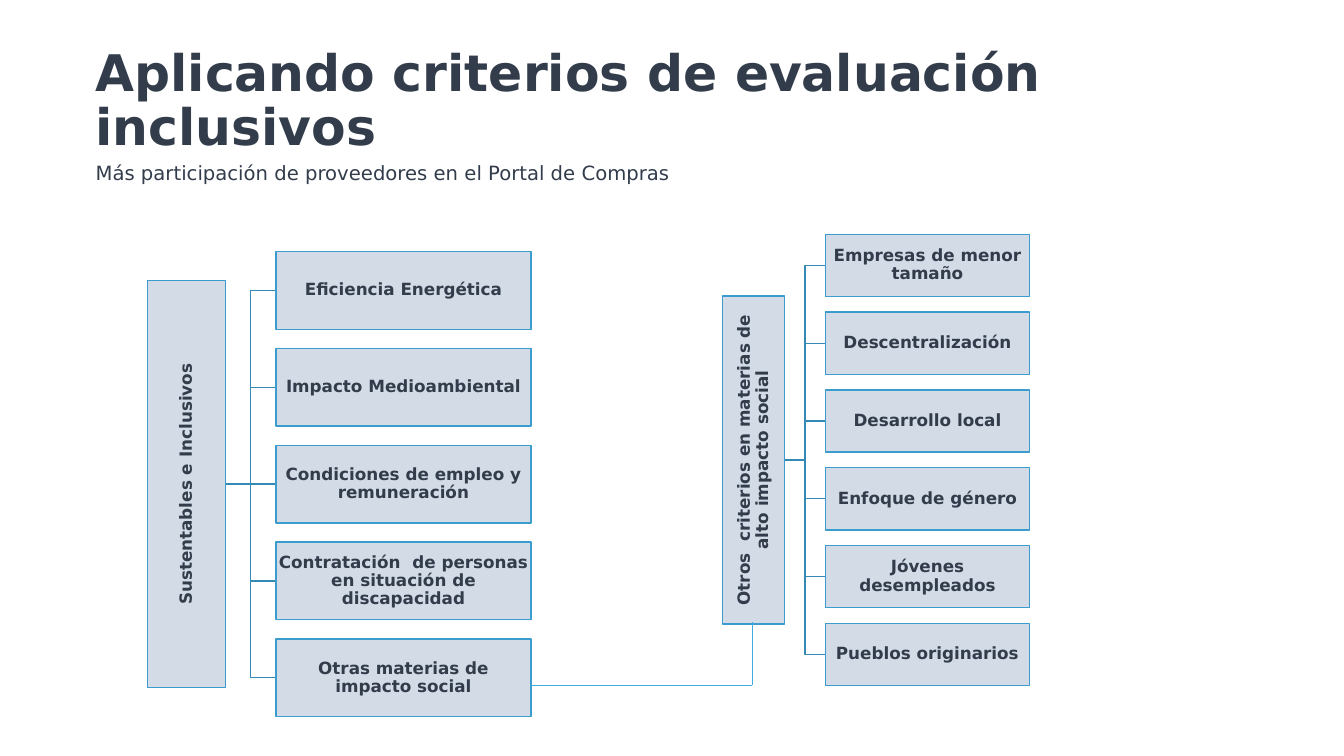
"""Build a slide with two trees of inclusive evaluation criteria."""
from dataclasses import dataclass

import pptx
import pptx.dml.color
import pptx.enum.shapes
import pptx.enum.text
import pptx.util
from lxml import etree
from pptx.util import Cm


@dataclass(frozen=True)
class Theme:
    font: str = "DejaVu Sans"
    text: str = "323C4B"
    box_fill: str = "D2DBE6"
    box_line: str = "3B9CCD"
    branch: str = "348AB5"
    link: str = "41ACE2"
    title_size: int = 36
    subtitle_size: int = 14
    box_size: int = 12


theme = Theme()
color = pptx.dml.color.RGBColor.from_string
align = pptx.enum.text.PP_ALIGN
anchor = pptx.enum.text.MSO_ANCHOR


def write(shape, text, size, bold, line_spacing=None):
    frame = shape.text_frame
    frame.word_wrap = True
    frame.text = text
    paragraph = frame.paragraphs[0]
    paragraph.line_spacing = line_spacing
    font = paragraph.runs[0].font
    font.name = theme.font
    font.size = pptx.util.Pt(size)
    font.bold = bold
    font.color.rgb = color(theme.text)
    return frame


def add_line(start_x, start_y, end_x, end_y, line_color, width):
    line = slide.shapes.add_connector(
        pptx.enum.shapes.MSO_CONNECTOR.STRAIGHT,
        Cm(start_x), Cm(start_y), Cm(end_x), Cm(end_y),
    )
    line.line.color.rgb = color(line_color)
    line.line.width = pptx.util.Pt(width)
    etree.SubElement(line._element.spPr, pptx.oxml.ns.qn("a:effectLst"))


presentation = pptx.Presentation()
presentation.slide_width = Cm(33.87)
presentation.slide_height = Cm(19.05)
slide = presentation.slides.add_slide(presentation.slide_layouts[6])

title = slide.shapes.add_textbox(Cm(2.16), Cm(1.78), Cm(25.73), Cm(1.6))
title_frame = write(title, "Aplicando criterios de evaluación inclusivos", theme.title_size, True, 0.9)
title_frame.vertical_anchor = anchor.MIDDLE

subtitle = slide.shapes.add_textbox(Cm(2.16), Cm(3.94), Cm(16.33), Cm(0.86))
write(subtitle, "Más participación de proveedores en el Portal de Compras", theme.subtitle_size, False)

trees = [
    {
        "root": "Sustentables e Inclusivos",
        "center": (4.7, 12.2),
        "root_length": 10.26,
        "thickness": 1.96,
        "child_left": 6.96,
        "child_width": 6.42,
        "pitch": 2.44,
        "children": [
            "Eficiencia Energética",
            "Impacto Medioambiental",
            "Condiciones de empleo y remuneración",
            "Contratación  de personas en situación de discapacidad",
            "Otras materias de impacto social",
        ],
    },
    {
        "root": "Otros  criterios en materias de alto impacto social",
        "center": (18.99, 11.59),
        "root_length": 8.26,
        "thickness": 1.57,
        "child_left": 20.8,
        "child_width": 5.15,
        "pitch": 1.96,
        "children": [
            "Empresas de menor tamaño",
            "Descentralización",
            "Desarrollo local",
            "Enfoque de género",
            "Jóvenes desempleados",
            "Pueblos originarios",
        ],
    },
]

for tree in trees:
    center_x, center_y = tree["center"]
    thickness = tree["thickness"]
    child_left, child_width = tree["child_left"], tree["child_width"]
    root_right = center_x + thickness / 2
    middle_x = (root_right + child_left) / 2
    boxes = [(tree["root"], center_x, center_y, tree["root_length"], 270)]

    for index, label in enumerate(tree["children"]):
        offset = index - (len(tree["children"]) - 1) / 2
        child_y = center_y + offset * tree["pitch"]
        boxes.append((label, child_left + child_width / 2, child_y, child_width, 0))
        if offset == 0:
            add_line(root_right, center_y, child_left, child_y, theme.branch, 1)
            continue
        builder = slide.shapes.build_freeform(Cm(root_right), Cm(center_y))
        corners = [(middle_x, center_y), (middle_x, child_y), (child_left, child_y)]
        builder.add_line_segments([(Cm(x), Cm(y)) for x, y in corners], close=False)
        branch = builder.convert_to_shape()
        branch.shadow.inherit = False
        branch.fill.background()
        branch.line.color.rgb = color(theme.branch)
        branch.line.width = pptx.util.Pt(1)

    for label, box_x, box_y, width, rotation in boxes:
        box = slide.shapes.add_shape(
            pptx.enum.shapes.MSO_SHAPE.RECTANGLE,
            Cm(box_x - width / 2), Cm(box_y - thickness / 2), Cm(width), Cm(thickness),
        )
        box.rotation = rotation
        box.shadow.inherit = False
        box.fill.solid()
        box.fill.fore_color.rgb = color(theme.box_fill)
        box.line.color.rgb = color(theme.box_line)
        box.line.width = pptx.util.Pt(1)
        frame = write(box, label, theme.box_size, True, 0.9)
        frame.vertical_anchor = anchor.MIDDLE
        frame.margin_left = frame.margin_right = Cm(0.03)
        frame.margin_top = frame.margin_bottom = Cm(0.03)
        frame.paragraphs[0].alignment = align.CENTER

add_line(13.38, 17.27, 18.95, 17.27, theme.link, 0.5)
add_line(18.95, 17.27, 18.95, 15.67, theme.link, 0.5)

presentation.save("out.pptx")
